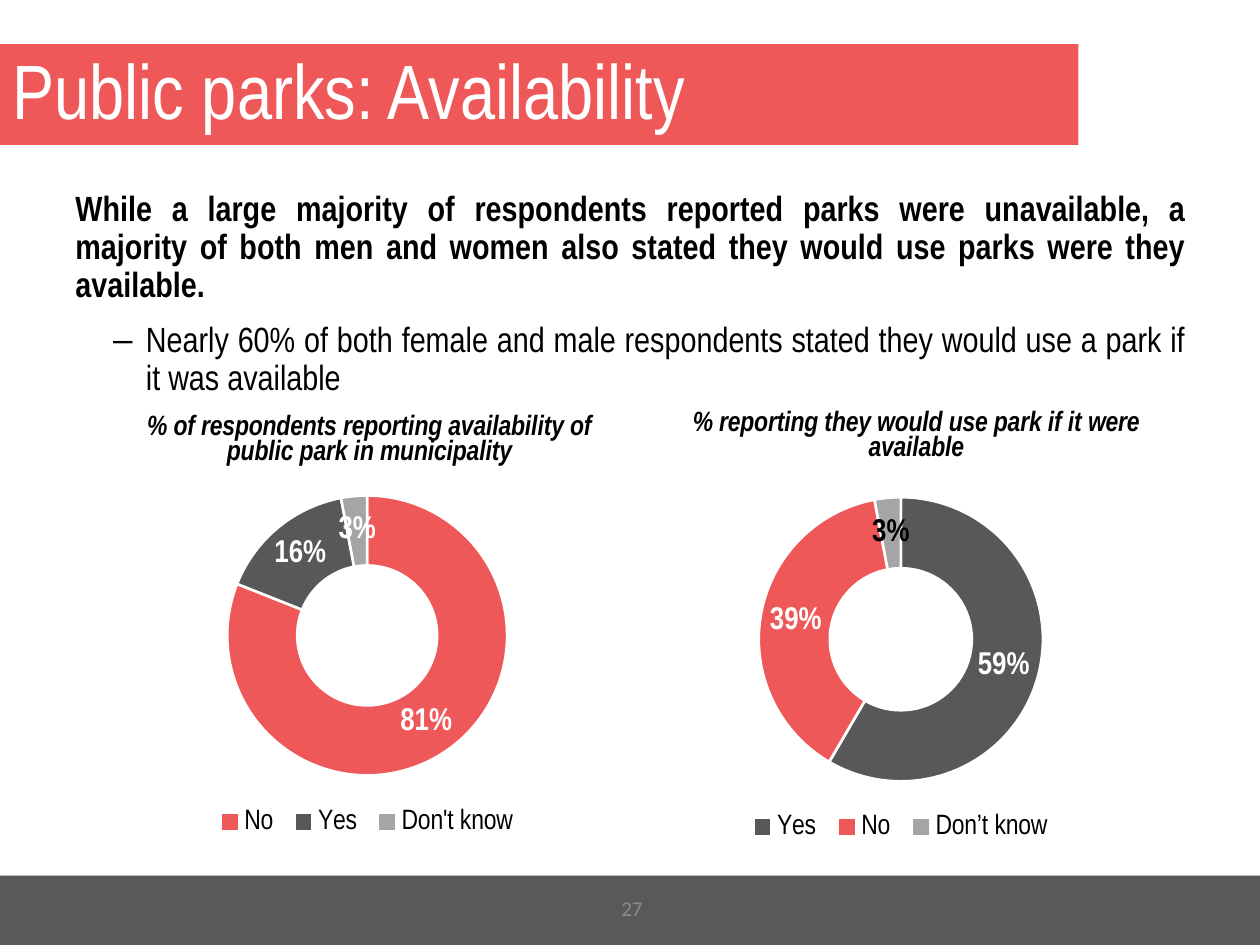
from dataclasses import dataclass

from lxml import etree
from pptx import Presentation
from pptx.chart import data
from pptx.dml.color import RGBColor
from pptx.enum import chart as charts, shapes, text
from pptx.oxml import ns
from pptx.util import Inches, Pt


@dataclass(frozen=True)
class Theme:
    font: str = "Arial Narrow"
    number_font: str = "Calibri"
    red: str = "EE5859"
    dark: str = "58585A"
    gray: str = "A5A5A5"
    footer: str = "595959"
    number: str = "8C8C8C"
    white: str = "FFFFFF"
    black: str = "000000"
    title_size: int = 44
    body_size: int = 20
    label_size: int = 18
    chart_size: int = 16
    number_size: int = 12


THEME = Theme()
TITLE = "Public parks: Availability"
MESSAGE = ("While a large majority of respondents reported parks were unavailable, "
           "a majority of both men and women also stated they would use parks were "
           "they available.")
DETAIL = ("Nearly 60% of both female and male respondents stated they would use "
          "a park if it was available")
PAGE_NUMBER = "27"

# Layouts are fractions of the chart frame: left, top, width, height.
DOUGHNUTS = [
    {"title": "% of respondents reporting availability of public park in municipality",
     "box": (0.5, 3.08, 4.83, 3.89),
     "slices": [("No", 81, THEME.red), ("Yes", 16, THEME.dark),
                ("Don't know", 3, THEME.gray)],
     "number_format": "General", "percent": True, "black_labels": [],
     "title_at": (0.13, 0.04), "plot_at": (0.27, 0.18, 0.46, 0.65),
     "legend_at": (0.24, 0.84, 0.52, 0.09)},
    {"title": "% reporting they would use park if it were available",
     "box": (4.8, 3.08, 4.7, 4.03),
     "slices": [("Yes", 0.59, THEME.dark), ("No", 0.39, THEME.red),
                ("Don’t know", 0.03, THEME.gray)],
     "number_format": "0%", "percent": False, "black_labels": [2],
     "title_at": (0.14, 0.03), "plot_at": (0.26, 0.21, 0.48, 0.57),
     "legend_at": (0.23, 0.82, 0.54, 0.09)},
]


def inches(box):
    return [Inches(length) for length in box]


def style(font, size, color, name=THEME.font, bold=False, italic=False):
    font.name, font.size, font.bold, font.italic = name, Pt(size), bold, italic
    font.color.rgb = RGBColor.from_string(color)


def fill(shape, color):
    shape.fill.solid()
    shape.fill.fore_color.rgb = RGBColor.from_string(color)


def place(element, index, fractions, inner=False):
    """Give a chart part a manual layout, inserted as child number index."""
    for old in element.findall(ns.qn("c:layout")):
        element.remove(old)
    layout = etree.Element(ns.qn("c:layout"))
    manual = etree.SubElement(layout, ns.qn("c:manualLayout"))
    settings = [("layoutTarget", "inner")] if inner else []
    settings += [("xMode", "edge"), ("yMode", "edge")]
    settings += zip("xywh", fractions)
    for tag, value in settings:
        etree.SubElement(manual, ns.qn("c:" + tag)).set("val", str(value))
    element.insert(index, layout)


def add_title(slide):
    title = slide.shapes.title
    title.left, title.top, title.width, title.height = inches((0, 0.35, 8.56, 0.8))
    fill(title, THEME.red)
    frame = title.text_frame
    frame.text = TITLE
    frame.vertical_anchor = text.MSO_ANCHOR.MIDDLE
    paragraph = frame.paragraphs[0]
    paragraph.alignment = text.PP_ALIGN.LEFT
    paragraph.line_spacing = 0.9
    style(paragraph.runs[0].font, THEME.title_size, THEME.white)


def add_body(slide):
    frame = slide.shapes.add_textbox(*inches((0.5, 1.47, 9.01, 1.65))).text_frame
    frame.word_wrap = True
    frame.text = f"{MESSAGE}\n{DETAIL}"
    message, detail = frame.paragraphs
    properties = detail._p.get_or_add_pPr()
    properties.set("marL", str(Inches(0.56)))
    properties.set("indent", str(Inches(-0.26)))
    detail.space_before = Pt(10)
    for paragraph in (message, detail):
        paragraph.alignment = text.PP_ALIGN.JUSTIFY
        paragraph.line_spacing = 0.9
        style(paragraph.runs[0].font, THEME.body_size, THEME.black,
              bold=paragraph is message)
    etree.SubElement(properties, ns.qn("a:buFont")).set("typeface", "Arial")
    etree.SubElement(properties, ns.qn("a:buChar")).set("char", "–")


def style_labels(series, doughnut):
    labels = series.data_labels
    labels.show_value = not doughnut["percent"]
    labels.show_percentage = doughnut["percent"]
    labels.number_format = "0%"
    labels.number_format_is_linked = False
    style(labels.font, THEME.label_size, THEME.white, bold=True)
    for index in doughnut["black_labels"]:
        label = series.points[index].data_label
        style(label.font, THEME.label_size, THEME.black, bold=True)
        text_properties = series._element.find(
            f".//{ns.qn('c:dLbl')}/{ns.qn('c:txPr')}")
        number_format = etree.Element(ns.qn("c:numFmt"))
        number_format.set("formatCode", "0%")
        number_format.set("sourceLinked", "0")
        text_properties.addprevious(number_format)


def add_doughnut(slide, doughnut):
    names, values, colors = zip(*doughnut["slices"])
    chart_data = data.CategoryChartData(number_format=doughnut["number_format"])
    chart_data.categories = names
    chart_data.add_series("Series 1", values)
    chart = slide.shapes.add_chart(charts.XL_CHART_TYPE.DOUGHNUT,
                                   *inches(doughnut["box"]), chart_data).chart
    style(chart.font, THEME.chart_size, THEME.black)

    frame = chart.chart_title.text_frame
    frame.text = doughnut["title"]
    style(frame.paragraphs[0].runs[0].font, THEME.chart_size, THEME.black,
          bold=True, italic=True)
    place(chart.chart_title._element, 1, doughnut["title_at"])

    chart.has_legend = True
    chart.legend.position = charts.XL_LEGEND_POSITION.BOTTOM
    chart.legend.include_in_layout = False
    style(chart.legend.font, THEME.chart_size, THEME.black)
    place(chart.legend._element, 1, doughnut["legend_at"])

    plot = chart.plots[0]
    plot.vary_by_categories = True
    plot._element.find(ns.qn("c:holeSize")).set("val", "40")
    place(plot._element.getparent(), 0, doughnut["plot_at"], inner=True)
    series = plot.series[0]
    for index, color in enumerate(colors):
        point = series.points[index].format
        fill(point, color)
        point.line.color.rgb = RGBColor.from_string(THEME.white)
        point.line.width = Pt(1.5)
    style_labels(series, doughnut)


def add_footer(slide):
    bar = slide.shapes.add_shape(shapes.MSO_SHAPE.RECTANGLE,
                                 *inches((0, 6.95, 10, 0.55)))
    bar.shadow.inherit = False
    fill(bar, THEME.footer)
    bar.line.fill.background()


def add_page_number(slide):
    frame = slide.shapes.add_textbox(*inches((3.89, 7.01, 2.25, 0.4))).text_frame
    frame.word_wrap = True
    frame.text = PAGE_NUMBER
    frame.vertical_anchor = text.MSO_ANCHOR.MIDDLE
    paragraph = frame.paragraphs[0]
    paragraph.alignment = text.PP_ALIGN.CENTER
    style(paragraph.runs[0].font, THEME.number_size, THEME.number, THEME.number_font)


def main():
    presentation = Presentation()
    presentation.slide_width, presentation.slide_height = inches((10, 7.5))
    slide = presentation.slides.add_slide(
        presentation.slide_layouts.get_by_name("Title Only"))
    add_footer(slide)
    add_title(slide)
    add_body(slide)
    for doughnut in DOUGHNUTS:
        add_doughnut(slide, doughnut)
    add_page_number(slide)
    presentation.save("out.pptx")


if __name__ == "__main__":
    main()
